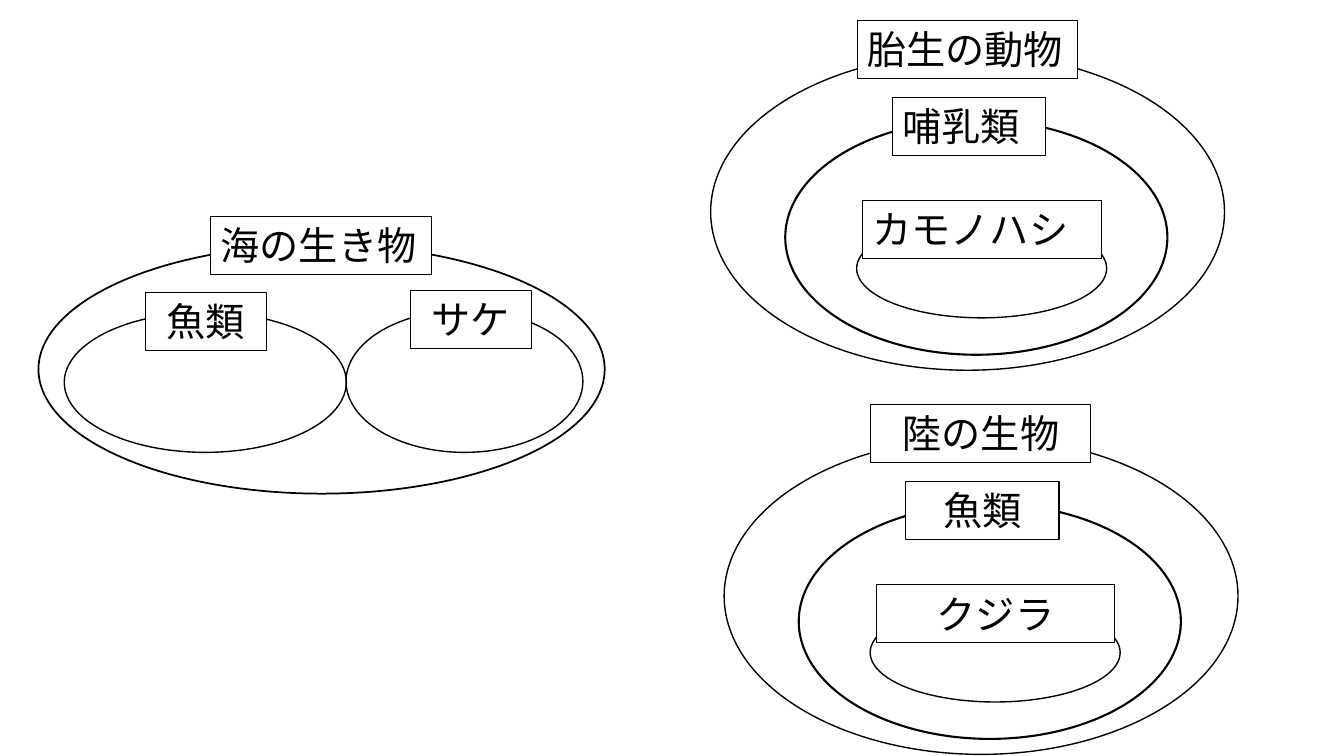
from pptx import Presentation
from pptx.dml.color import RGBColor
from pptx.enum.shapes import MSO_SHAPE
from pptx.enum.text import MSO_ANCHOR, MSO_AUTO_SIZE, PP_ALIGN
from pptx.util import Cm, Pt

OVAL, RECTANGLE = MSO_SHAPE.OVAL, MSO_SHAPE.RECTANGLE
TOP, FIT_SHAPE = MSO_ANCHOR.TOP, MSO_AUTO_SIZE.SHAPE_TO_FIT_TEXT
JUSTIFY, CENTER = PP_ALIGN.JUSTIFY, PP_ALIGN.CENTER

COLORS = {"ink": "000000", "label": "FFFFFF"}
FONT = "TeX Gyre Schola"
TEXT_SIZE = 28
LABEL_HEIGHT = 1.46
LABEL_LINE = 0.75

# Lengths in cm, measured from the top left of each diagram's outer oval:
# oval (left, top, width, height), oval line in points, label (left, top, width)
SEA_LAYOUT = [
    ((0, 0, 14.27, 6.27), 1.25, (4.34, -0.72, 5.56)),
    ((0.65, 1.7, 7.11, 3.53), 1, (2.69, 1.2, 3.05)),
    ((7.75, 1.65, 5.97, 3.58), 1, (9.37, 1.15, 3.05)),
]
NESTED_LAYOUT = [
    ((0, 0, 12.95, 7.98), 1, (3.7, -0.84, 5.54)),
    ((3.68, 4.17, 6.3, 2.49), 1, (3.83, 3.71, 6.02)),
    ((1.88, 1.67, 9.63, 5.92), 1.5, (4.58, 1.11, 3.86)),
]

# Diagram origin, layout, and (name, alignment) of each set
DIAGRAMS = [
    ((0.97, 6.17), SEA_LAYOUT,
     [("海の生き物", JUSTIFY), ("魚類", CENTER), ("サケ", CENTER)]),
    ((17.91, 1.35), NESTED_LAYOUT,
     [("胎生の動物", JUSTIFY), ("カモノハシ", JUSTIFY), ("哺乳類", JUSTIFY)]),
    ((18.25, 11.03), NESTED_LAYOUT,
     [("陸の生物", CENTER), ("クジラ", CENTER), ("魚類", CENTER)]),
]


def color(name):
    return RGBColor.from_string(COLORS[name])


def add_outlined(group, kind, origin, box, line_width):
    """Add a shape to the group, its box given relative to the origin."""
    left, top, width, height = box
    shape = group.shapes.add_shape(
        kind, Cm(origin[0] + left), Cm(origin[1] + top), Cm(width), Cm(height))
    shape.shadow.inherit = False
    shape.fill.background()
    shape.line.color.rgb = color("ink")
    shape.line.width = Pt(line_width)
    return shape


def add_label(group, origin, box, text, alignment):
    shape = add_outlined(group, RECTANGLE, origin, (*box, LABEL_HEIGHT), LABEL_LINE)
    shape.fill.solid()
    shape.fill.fore_color.rgb = color("label")
    frame = shape.text_frame
    frame.word_wrap = True
    frame.vertical_anchor = TOP
    frame.auto_size = FIT_SHAPE
    paragraph = frame.paragraphs[0]
    paragraph.text = text
    paragraph.alignment = alignment
    paragraph.font.name = FONT
    paragraph.font.size = Pt(TEXT_SIZE)
    paragraph.font.color.rgb = color("ink")


def main():
    presentation = Presentation()
    presentation.slide_width, presentation.slide_height = Cm(33.87), Cm(19.05)
    slide = presentation.slides.add_slide(presentation.slide_layouts[6])
    for origin, layout, sets in DIAGRAMS:
        group = slide.shapes.add_group_shape()
        for (oval, line_width, label), (name, alignment) in zip(layout, sets):
            add_outlined(group, OVAL, origin, oval, line_width)
            add_label(group, origin, label, name, alignment)
    presentation.save("out.pptx")


if __name__ == "__main__":
    main()
